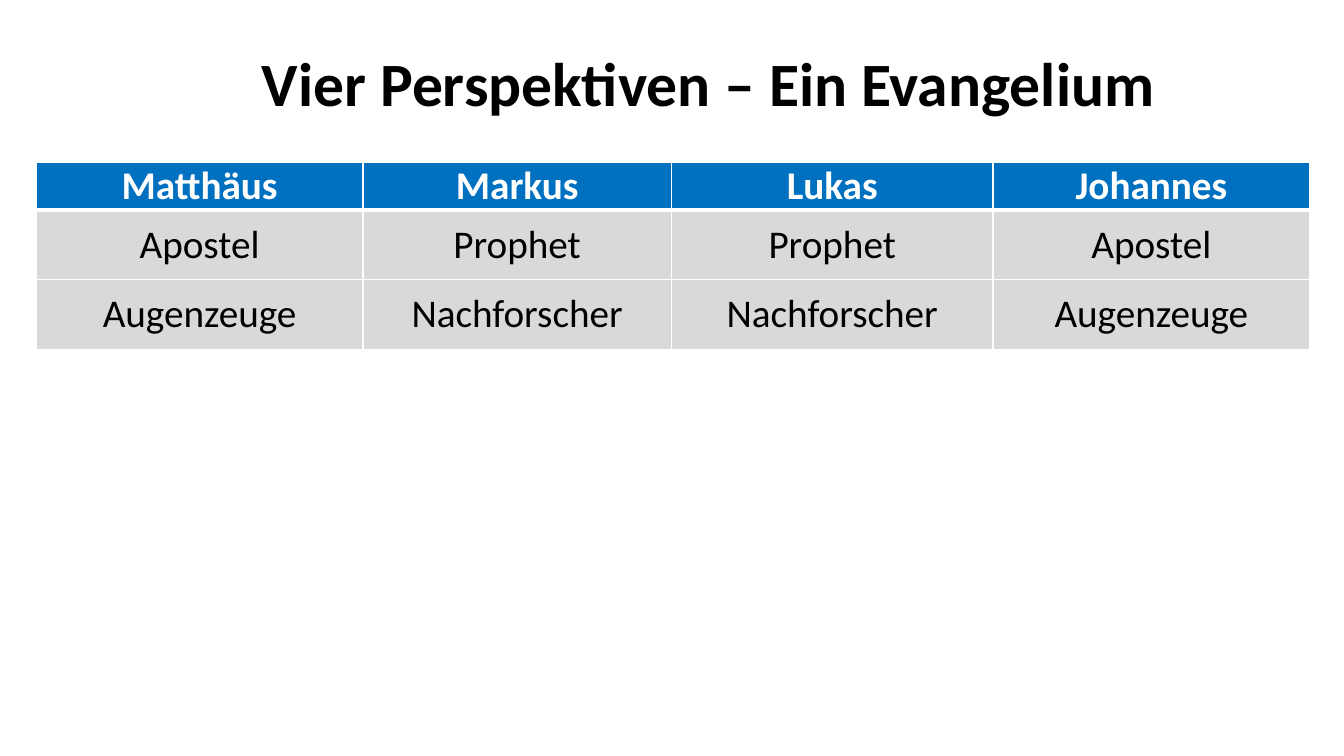
from lxml.etree import SubElement
from pptx import Presentation
from pptx.dml.color import RGBColor
from pptx.enum.text import MSO_ANCHOR, PP_ALIGN
from pptx.oxml.ns import qn
from pptx.util import Inches, Pt

TITLE = "Vier Perspektiven – Ein Evangelium"
ROWS = [
    ("Matthäus", "Markus", "Lukas", "Johannes"),
    ("Apostel", "Prophet", "Prophet", "Apostel"),
    ("Augenzeuge", "Nachforscher", "Nachforscher", "Augenzeuge"),
]
COLUMN_WIDTHS = (3.24, 3.06, 3.19, 3.14)
ROW_HEIGHTS = (0.47, 0.69, 0.69)
COLORS = {"header": "0070C0", "body": "D9D9D9", "white": "FFFFFF", "black": "000000"}


def write_text(frame, text, size, color="black", bold=False, line_spacing=None):
    frame.word_wrap = True
    frame.vertical_anchor = MSO_ANCHOR.MIDDLE
    paragraph = frame.paragraphs[0]
    paragraph.alignment = PP_ALIGN.CENTER
    paragraph.line_spacing = line_spacing
    run = paragraph.add_run()
    run.text = text
    run.font.name = "Calibri"
    run.font.size = Pt(size)
    run.font.bold = bold
    run.font.color.rgb = RGBColor.from_string(COLORS[color])


def add_borders(cell, widths):
    properties = cell._tc.get_or_add_tcPr()
    for side, width in widths.items():
        line = SubElement(properties, qn(f"a:ln{side}"), w=str(Pt(width)))
        fill = SubElement(line, qn("a:solidFill"))
        SubElement(fill, qn("a:srgbClr"), val=COLORS["white"])


def add_title(slide):
    title = slide.shapes.title
    title.left, title.top = Inches(1.28), Inches(0.41)
    title.width, title.height = Inches(11.5), Inches(0.89)
    write_text(title.text_frame, TITLE, size=44, bold=True, line_spacing=0.9)


def add_evangelist_table(slide):
    frame = slide.shapes.add_table(
        len(ROWS), len(COLUMN_WIDTHS), Inches(0.36), Inches(1.61),
        Inches(sum(COLUMN_WIDTHS)), Inches(sum(ROW_HEIGHTS)))
    table = frame.table
    table.horz_banding = False
    for column, width in zip(table.columns, COLUMN_WIDTHS):
        column.width = Inches(width)
    for row_index, (row, height) in enumerate(zip(table.rows, ROW_HEIGHTS)):
        row.height = Inches(height)
        is_header = row_index == 0
        borders = {"L": 1, "R": 1, "T": 3 if row_index == 1 else 1, "B": 3 if is_header else 1}
        for cell, text in zip(row.cells, ROWS[row_index]):
            cell.margin_left = cell.margin_right = Inches(0.14)
            cell.margin_top = cell.margin_bottom = 0
            cell.vertical_anchor = MSO_ANCHOR.MIDDLE
            add_borders(cell, borders)
            cell.fill.solid()
            cell.fill.fore_color.rgb = RGBColor.from_string(COLORS["header" if is_header else "body"])
            write_text(cell.text_frame, text, size=28,
                       color="white" if is_header else "black", bold=is_header)


def main():
    presentation = Presentation()
    presentation.slide_width, presentation.slide_height = Inches(13.33), Inches(7.5)
    slide = presentation.slides.add_slide(presentation.slide_layouts[5])
    add_title(slide)
    add_evangelist_table(slide)
    presentation.save("out.pptx")


if __name__ == "__main__":
    main()
